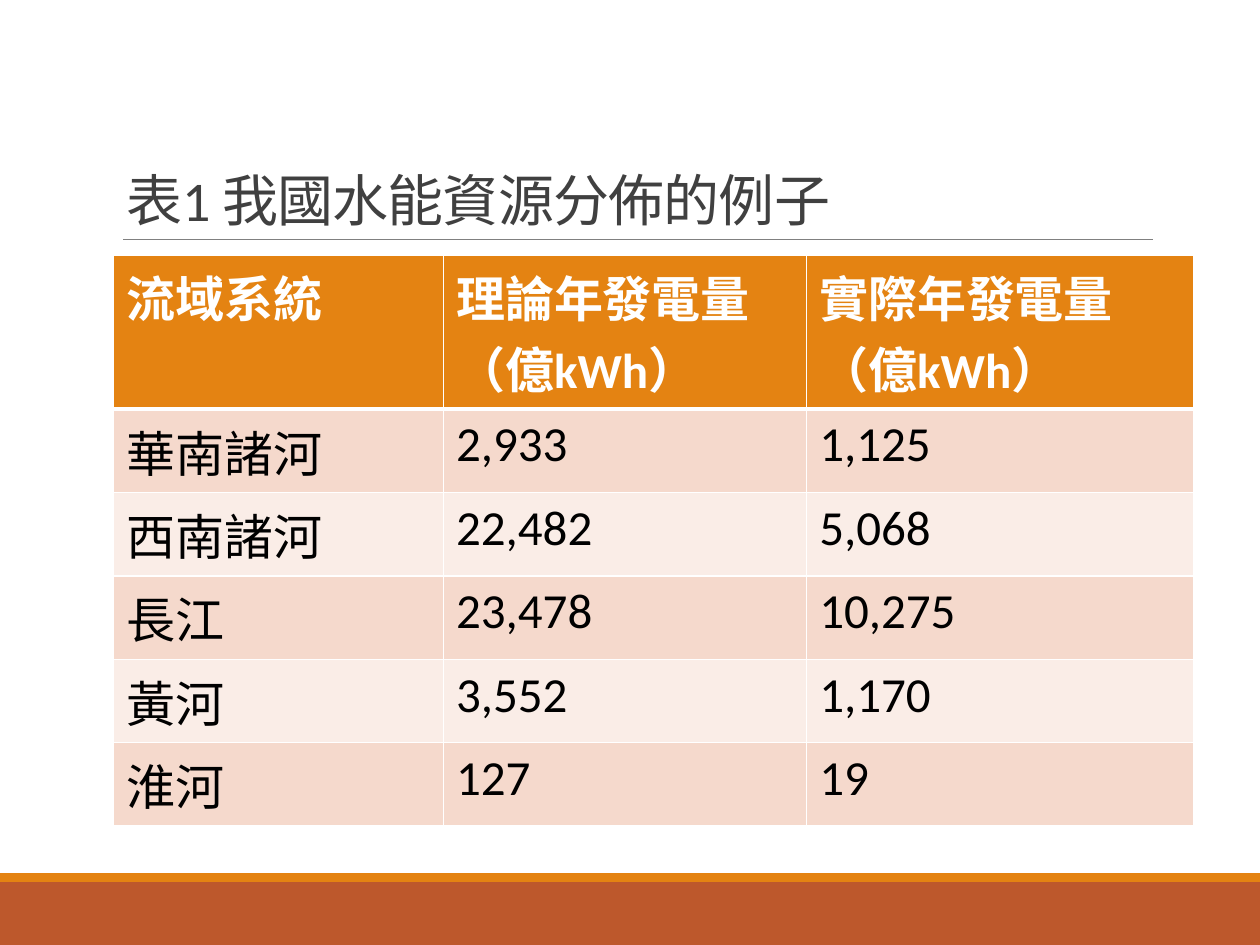
from dataclasses import dataclass

from lxml import etree
from pptx import Presentation
from pptx import util as u
from pptx.dml.color import RGBColor
from pptx.enum import shapes, text
from pptx.oxml import ns


@dataclass(frozen=True)
class Theme:
    font: str = "Calibri"
    title_size: float = 32
    table_size: float = 28
    title: str = "404040"
    rule: str = "808080"
    accent: str = "E48312"
    footer: str = "BD582C"
    light: str = "FFFFFF"
    dark: str = "000000"
    bands: tuple = ("F5D9CC", "FAEDE7")


def write(frame, words, *, size, color, font, bold=False, spacing=None, tracking=None):
    """Put one left-aligned, formatted paragraph in a text frame."""
    para = frame.paragraphs[0]
    para.alignment = text.PP_ALIGN.LEFT
    if spacing:
        para.line_spacing = spacing
    span = para.add_run()
    span.text = words
    span.font.name = font
    span.font.size = u.Pt(size)
    span.font.bold = bold
    span.font.color.rgb = RGBColor.from_string(color)
    if tracking:
        span.font._element.set("spc", str(int(tracking * 100)))


class SlideBuilder:
    def __init__(self, page, theme):
        self.page = page
        self.theme = theme

    def band(self, left, top, width, height, color):
        box = self.page.shapes.add_shape(
            shapes.MSO_SHAPE.RECTANGLE, *map(u.Pt, (left, top, width, height)))
        box.shadow.inherit = False
        box.fill.solid()
        box.fill.fore_color.rgb = RGBColor.from_string(color)
        box.line.fill.background()

    def rule(self, left, right, top):
        line = self.page.shapes.add_connector(
            shapes.MSO_CONNECTOR.STRAIGHT, *map(u.Pt, (left, top, right, top)))
        line.line.width = u.Pt(0.5)
        line.line.color.rgb = RGBColor.from_string(self.theme.rule)
        etree.SubElement(line._element.spPr, ns.qn("a:effectLst"))

    def title(self, words, left, top, width, height):
        box = self.page.shapes.title
        box.left, box.top, box.width, box.height = map(u.Pt, (left, top, width, height))
        frame = box.text_frame
        frame.word_wrap = True
        frame.auto_size = text.MSO_AUTO_SIZE.NONE
        frame.vertical_anchor = text.MSO_ANCHOR.BOTTOM
        write(frame, words, size=self.theme.title_size, color=self.theme.title,
              font=self.theme.font, spacing=0.85, tracking=-0.5)

    def border(self, cell, side, width):
        line = etree.SubElement(cell._tc.get_or_add_tcPr(), ns.qn(f"a:ln{side}"),
                                w=str(u.Pt(width)))
        fill = etree.SubElement(line, ns.qn("a:solidFill"))
        etree.SubElement(fill, ns.qn("a:srgbClr"), val=self.theme.light)

    def table(self, rows, left, top, widths, row_height):
        theme = self.theme
        frame = self.page.shapes.add_table(
            len(rows), len(widths), u.Pt(left), u.Pt(top),
            u.Pt(sum(widths)), u.Pt(row_height * len(rows)))
        grid = frame.table
        for column, width in zip(grid.columns, widths):
            column.width = u.Pt(width)
        for index, values in enumerate(rows):
            header = index == 0
            grid.rows[index].height = u.Pt(row_height)
            fill = theme.accent if header else theme.bands[(index - 1) % 2]
            for cell, words in zip(grid.rows[index].cells, values):
                # A thick line divides the header from the data
                for side in "LRTB":
                    thick = (header and side == "B") or (index == 1 and side == "T")
                    self.border(cell, side, 3 if thick else 1)
                cell.fill.solid()
                cell.fill.fore_color.rgb = RGBColor.from_string(fill)
                write(cell.text_frame, words, size=theme.table_size, font=theme.font,
                      color=theme.light if header else theme.dark, bold=header)


ROWS = [
    ("流域系統", "理論年發電量（億kWh）", "實際年發電量（億kWh）"),
    ("華南諸河", "2,933", "1,125"),
    ("西南諸河", "22,482", "5,068"),
    ("長江", "23,478", "10,275"),
    ("黃河", "3,552", "1,170"),
    ("淮河", "127", "19"),
]


def main():
    deck = Presentation()
    deck.slide_width, deck.slide_height = u.Pt(720), u.Pt(540)
    theme = Theme()
    page = deck.slides.add_slide(deck.slide_layouts[5])
    builder = SlideBuilder(page, theme)

    # Footer bands and title rule
    builder.band(0, 504, 720, 36, theme.footer)
    builder.band(0, 499, 720, 5, theme.accent)
    builder.rule(70.5, 659, 136.8)

    # Title and data
    builder.title("表1 我國水能資源分佈的例子", 64.8, 22.3, 594, 114.5)
    builder.table(ROWS, 65, 145.6, (188.5, 207.5, 221), 29.2)

    deck.save("out.pptx")


if __name__ == "__main__":
    main()
